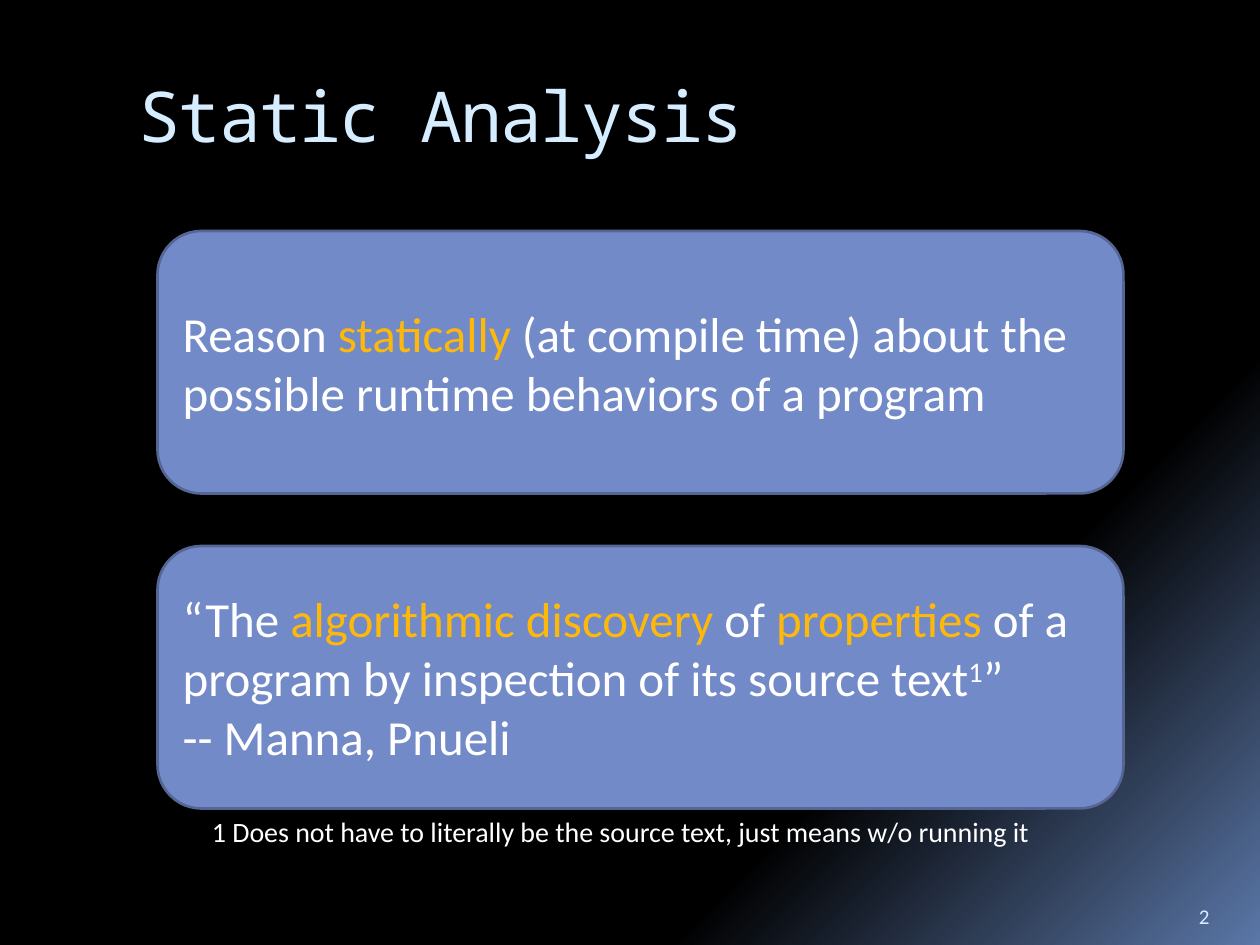
import dataclasses

import lxml.etree
import pptx
import pptx.dml.color
import pptx.enum.shapes
import pptx.enum.text
import pptx.oxml
import pptx.oxml.ns
import pptx.util

Pt = pptx.util.Pt
Anchor = pptx.enum.text.MSO_ANCHOR


@dataclasses.dataclass(frozen=True)
class Theme:
    black: str = "000000"
    glow: str = "5B77A8"
    pale: str = "D6ECFF"
    white: str = "FFFFFF"
    accent: str = "FEB80A"
    card: str = "738AC8"
    edge: str = "556694"
    title_font: str = "Noto Sans Mono"
    body_font: str = "Calibri"
    title_size: int = 40
    body_size: int = 28
    note_size: int = 16
    number_size: int = 12


THEME = Theme()


def color(code):
    return pptx.dml.color.RGBColor.from_string(code)


def add_span(para, text, size=THEME.body_size, font=THEME.body_font,
             fill=THEME.white, **attributes):
    """Add formatted text; extra attributes go to the run properties."""
    span = para.add_run()
    span.text = text
    span.font.size = Pt(size)
    span.font.name = font
    span.font.color.rgb = color(fill)
    for name, value in attributes.items():
        span.font._element.set(name, str(value))
    return span


def paint_background(page):
    """Diagonal gradient: black, then a glow in the lower right corner."""
    fill = page.background.fill
    fill.gradient()
    gradient = page.background._cSld.find(".//" + pptx.oxml.ns.qn("a:gradFill"))
    for child in list(gradient):
        gradient.remove(child)
    stops = lxml.etree.SubElement(gradient, pptx.oxml.ns.qn("a:gsLst"))
    for percent, code in ((65, THEME.black), (73, THEME.black), (100, THEME.glow)):
        stop = lxml.etree.SubElement(stops, pptx.oxml.ns.qn("a:gs"), pos=str(percent * 1000))
        lxml.etree.SubElement(stop, pptx.oxml.ns.qn("a:srgbClr"), val=code)
    lxml.etree.SubElement(gradient, pptx.oxml.ns.qn("a:lin"), ang=str(45 * 60000), scaled="0")


def set_title(page, text):
    title = page.shapes.title
    title.left, title.top, title.width, title.height = Pt(72), Pt(40.5), Pt(612), Pt(72)
    frame = title.text_frame
    frame.vertical_anchor = Anchor.TOP
    frame.margin_top = Pt(1)
    para = frame.paragraphs[0]
    para.alignment = pptx.enum.text.PP_ALIGN.LEFT
    add_span(para, text, size=THEME.title_size, font=THEME.title_font,
             fill=THEME.pale, spc=-100)


def add_card(page, top, paragraphs):
    """Rounded card; each paragraph is a list of (text, format) pairs."""
    card = page.shapes.add_shape(pptx.enum.shapes.MSO_SHAPE.ROUNDED_RECTANGLE,
                                 Pt(90), Pt(top), Pt(552), Pt(150))
    card.shadow.inherit = False
    card.fill.solid()
    card.fill.fore_color.rgb = color(THEME.card)
    card.line.color.rgb = color(THEME.edge)
    card.line.width = Pt(1.5)
    frame = card.text_frame
    frame.word_wrap = True
    frame.vertical_anchor = Anchor.MIDDLE
    for index, pieces in enumerate(paragraphs):
        para = frame.add_paragraph() if index else frame.paragraphs[0]
        para.alignment = pptx.enum.text.PP_ALIGN.LEFT
        for text, style in pieces:
            add_span(para, text, **style)


def add_label(page, text, left, top, width, height, wrap=True, anchor=Anchor.TOP, **style):
    box = page.shapes.add_textbox(Pt(left), Pt(top), Pt(width), Pt(height))
    frame = box.text_frame
    frame.word_wrap = wrap
    frame.vertical_anchor = anchor
    add_span(frame.paragraphs[0], text, **style)
    return box


def main():
    deck = pptx.Presentation()
    deck.slide_width, deck.slide_height = Pt(720), Pt(540)
    page = deck.slides.add_slide(deck.slide_layouts.get_by_name("Title Only"))
    paint_background(page)
    set_title(page, "Static Analysis")

    # Definition and quotation
    plain, strong = {}, {"fill": THEME.accent}
    add_card(page, 132, [[
        ("Reason ", plain),
        ("statically", strong),
        (" (at compile time) about the possible runtime behaviors of a program", plain),
    ]])
    add_card(page, 312, [
        [
            ("“The ", plain),
            ("algorithmic discovery ", strong),
            ("of ", plain),
            ("properties", strong),
            (" of a program by inspection of its source text", plain),
            ("1", {"baseline": 30000}),
            ("”", plain),
        ],
        [("-- Manna, Pnueli", plain)],
    ])

    # Footnote and page number
    note = add_label(page, "1 Does not have to literally be the source text, just means w/o running it",
                     114, 462, 489, 26.6, wrap=False, size=THEME.note_size)
    note.text_frame.auto_size = pptx.enum.text.MSO_AUTO_SIZE.SHAPE_TO_FIT_TEXT
    add_label(page, "2", 678, 505.5, 36, 28.8, anchor=Anchor.BOTTOM,
              size=THEME.number_size, fill=THEME.pale)

    deck.save("out.pptx")


if __name__ == "__main__":
    main()
